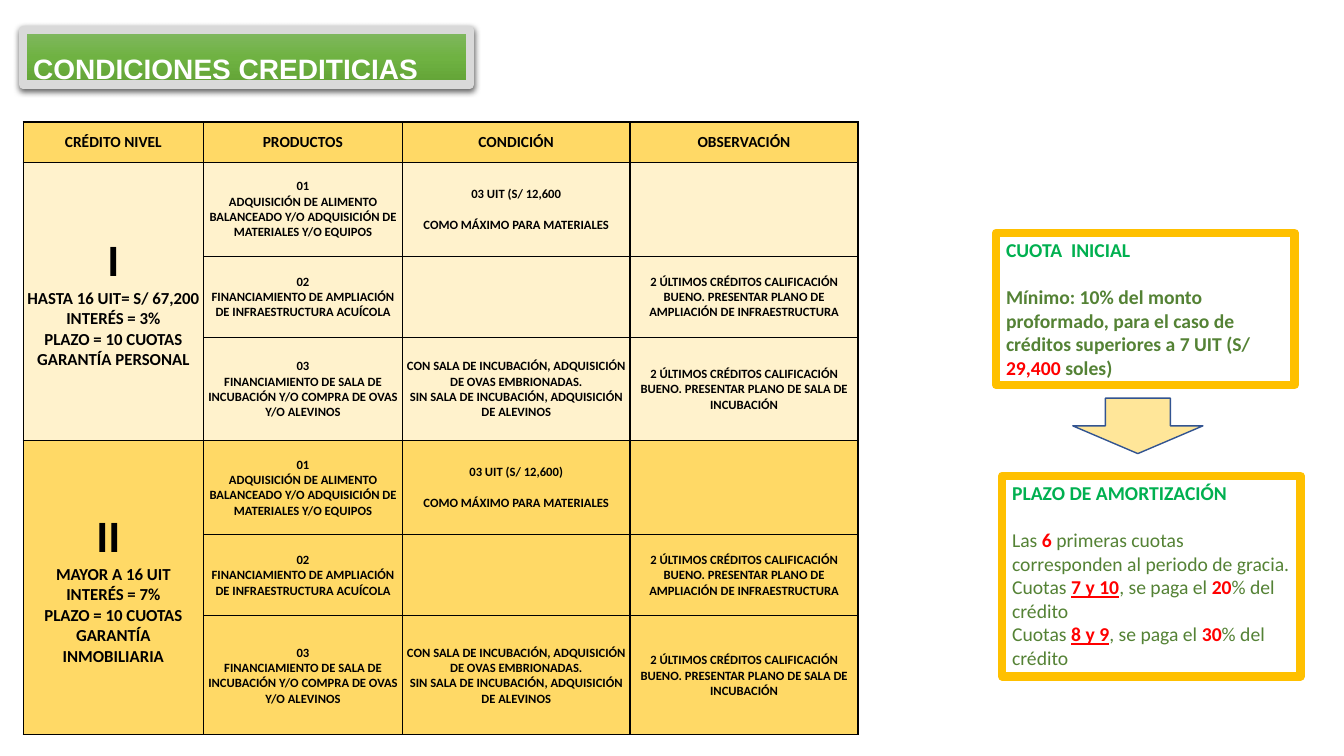
from copy import deepcopy
from lxml import etree
from pptx import Presentation
from pptx.dml.color import RGBColor
from pptx.enum.shapes import MSO_SHAPE
from pptx.enum.text import MSO_ANCHOR, PP_ALIGN
from pptx.oxml import parse_xml
from pptx.oxml.ns import nsdecls, qn
from pptx.util import Inches, Pt

RECT, ARROW = MSO_SHAPE.RECTANGLE, MSO_SHAPE.DOWN_ARROW
TOP, MIDDLE = MSO_ANCHOR.TOP, MSO_ANCHOR.MIDDLE
LEFT, CENTER, JUSTIFY = PP_ALIGN.LEFT, PP_ALIGN.CENTER, PP_ALIGN.JUSTIFY
GOLD, CREAM, BLACK = "FFD966", "FFF2CC", "000000"

HEAD = {"size": 14, "bold": True, "color": "00B050"}
PLAIN = {"size": 14, "bold": False, "color": "548235"}
STRONG = {**PLAIN, "bold": True}
RED = {**STRONG, "color": "FF0000"}
UNDER = {**RED, "underline": True}
LABEL = {"size": 11, "bold": True, "color": BLACK}
LEVEL, TERMS, SMALL = ({**LABEL, "size": size} for size in (32, 12, 9))

COLS = [1.79, 1.97, 2.26, 2.26]
ROWS = [0.4, 0.93, 0.81, 1.02, 0.93, 0.81, 1.18]
HEADS = ["CRÉDITO NIVEL", "PRODUCTOS", "CONDICIÓN", "OBSERVACIÓN"]
LEVELS = [
    ("I", "HASTA 16 UIT= S/ 67,200\nINTERÉS = 3%\nPLAZO = 10 CUOTAS\nGARANTÍA PERSONAL",
     "03 UIT (S/ 12,600", CREAM),
    ("II ", "MAYOR A 16 UIT\nINTERÉS = 7%\nPLAZO = 10 CUOTAS\nGARANTÍA INMOBILIARIA",
     "03 UIT (S/ 12,600)", GOLD),
]
GOODS = [
    "01\nADQUISICIÓN DE ALIMENTO BALANCEADO Y/O ADQUISICIÓN DE MATERIALES Y/O EQUIPOS",
    "02\nFINANCIAMIENTO DE AMPLIACIÓN DE INFRAESTRUCTURA ACUÍCOLA",
    "03\nFINANCIAMIENTO DE SALA DE INCUBACIÓN Y/O COMPRA DE OVAS Y/O ALEVINOS",
]
HATCH = ("CON SALA DE INCUBACIÓN, ADQUISICIÓN DE OVAS EMBRIONADAS.\n"
         "SIN SALA DE INCUBACIÓN, ADQUISICIÓN DE ALEVINOS")
RECORD = "2 ÚLTIMOS CRÉDITOS CALIFICACIÓN BUENO. PRESENTAR PLANO DE "
NOTES = ["", RECORD + "AMPLIACIÓN DE INFRAESTRUCTURA", RECORD + "SALA DE INCUBACIÓN"]

DEPOSIT = [
    [("CUOTA  INICIAL", HEAD)],
    [("Mínimo: 10% del monto proformado, para el caso de créditos superiores a 7 UIT (S/ ",
      STRONG), ("29,400", RED), (" soles)", STRONG)],
]
TERM = [
    [("PLAZO DE AMORTIZACIÓN", HEAD)],
    [("Las ", PLAIN), ("6 ", RED),
     ("primeras cuotas corresponden al periodo de gracia.", PLAIN)],
] + [
    [("Cuotas ", PLAIN), (dues, UNDER), (", se paga el ", PLAIN), (rate, RED),
     ("% del crédito", PLAIN)]
    for dues, rate in (("7 y 10", "20"), ("8 y 9", "30"))
]


def paint(text):
    """Turn a hex string into a colour."""
    return RGBColor.from_string(text)


def style(font, look):
    """Apply a dict of format values to a font."""
    values = {"name": "Calibri", **look, "size": Pt(look["size"])}
    font.color.rgb = paint(values.pop("color"))
    for name, value in values.items():
        setattr(font, name, value)


def write(frame, paras, align, gap=0):
    """Write paragraphs of runs, with a gap before the second one."""
    frame.word_wrap = True
    for index, runs in enumerate(paras):
        para = frame.add_paragraph() if index else frame.paragraphs[0]
        para.alignment = align
        if index == 1:
            para.space_before = Pt(gap)
        for text, look in runs:
            for turn, line in enumerate(text.split("\n")):
                if turn:
                    para.add_line_break()
                    para._p[-1].append(deepcopy(run._r.rPr))
                run = para.add_run()
                run.text = line
                style(run.font, look)


def block(slide, kind, box, fill, edge, width):
    """Add a preset shape with a flat fill and outline."""
    shape = slide.shapes.add_shape(kind, *map(Inches, box))
    shape.shadow.inherit = False
    if fill:
        shape.fill.solid()
        shape.fill.fore_color.rgb = paint(fill)
    else:
        shape.fill.background()
    shape.line.color.rgb = paint(edge)
    shape.line.width = Pt(width)
    shape.text_frame.vertical_anchor = TOP
    return shape


def title(slide, box):
    """Add the green title bar with its shading and shadow."""
    bar = block(slide, RECT, box, "6FB242", "D9D9D9", 6)
    props = bar._element.spPr
    stops = "".join(
        f'<a:gs pos="{pos}"><a:srgbClr val="{tint}"/></a:gs>'
        for pos, tint in ((0, "81B861"), (50000, "6FB242"), (100000, "62A336")))
    shade = parse_xml(f'<a:gradFill {nsdecls("a")} rotWithShape="1"><a:gsLst>{stops}</a:gsLst>'
                      '<a:lin ang="5400000" scaled="0"/></a:gradFill>')
    props.replace(props.find(qn("a:solidFill")), shade)
    props.find(qn("a:effectLst")).append(parse_xml(
        f'<a:outerShdw {nsdecls("a")} blurRad="{Pt(4.5)}" dist="{Pt(1.5)}" dir="5400000" '
        'rotWithShape="0"><a:srgbClr val="000000"><a:alpha val="63000"/></a:srgbClr>'
        '</a:outerShdw>'))
    look = {"size": 20, "bold": True, "color": "FFFFFF", "name": "Arial"}
    write(bar.text_frame, [[("CONDICIONES CREDITICIAS", look)]], JUSTIFY)
    bar.text_frame.paragraphs[0].line_spacing = 1.5


def border(cell, widths):
    """Draw the four black borders of a cell."""
    props = cell._tc.get_or_add_tcPr()
    for side, width in zip("LRTB", widths):
        line = etree.SubElement(props, qn(f"a:ln{side}"), w=str(Pt(width)))
        ink = etree.SubElement(line, qn("a:solidFill"))
        etree.SubElement(ink, qn("a:srgbClr"), val=BLACK)


def fill(cell, paras, tint, widths):
    """Set borders, fill and centred text of a cell."""
    border(cell, widths)
    cell.fill.solid()
    cell.fill.fore_color.rgb = paint(tint)
    cell.vertical_anchor = MIDDLE
    cell.margin_left = cell.margin_right = cell.margin_top = Inches(0.01)
    cell.margin_bottom = 0
    if paras:
        write(cell.text_frame, paras, CENTER, 11)


def credit(slide, left, top):
    """Add the table of credit levels."""
    box = map(Inches, (left, top, sum(COLS), sum(ROWS)))
    table = slide.shapes.add_table(len(ROWS), len(COLS), *box).table
    for col, width in zip(table.columns, COLS):
        col.width = Inches(width)
    for row, height in zip(table.rows, ROWS):
        row.height = Inches(height)
    for col, text in enumerate(HEADS):
        fill(table.cell(0, col), [[(text, LABEL)]], GOLD, (1, 1, 1, 1))
    count = len(GOODS)
    for rank, (name, terms, limit, tint) in enumerate(LEVELS):
        first = 1 + rank * count
        table.cell(first, 0).merge(table.cell(first + count - 1, 0))
        head = [[(name + "\n", LEVEL), (terms, TERMS)]]
        rules = [[limit, "COMO MÁXIMO PARA MATERIALES"], [], [HATCH]]
        for step in range(count):
            row = first + step
            fill(table.cell(row, 0), [] if step else head, tint, (1, 1, 1, 1))
            above = 1 if row == 1 else 0.5
            below = 1 if row == len(ROWS) - 1 else 0.5
            note = [NOTES[step]] if NOTES[step] else []
            for col, texts in enumerate(([GOODS[step]], rules[step], note), 1):
                paras = [[(text, SMALL)] for text in texts]
                fill(table.cell(row, col), paras, tint, (1, 1, above, below))


def panel(slide, box, paras):
    """Add a gold-framed note."""
    shape = block(slide, RECT, box, None, "FFC000", 6)
    write(shape.text_frame, paras, LEFT, 17)


def main():
    """Build and save the slide."""
    deck = Presentation()
    deck.slide_width, deck.slide_height = Inches(13.33), Inches(7.5)
    slide = deck.slides.add_slide(deck.slide_layouts[6])
    panel(slide, (9.88, 2.31, 2.96, 1.51), DEPOSIT)
    panel(slide, (9.94, 4.72, 2.96, 1.99), TERM)
    block(slide, ARROW, (10.64, 3.95, 1.29, 0.55), "FFE699", "325491", 1)
    credit(slide, 0.23, 1.21)
    title(slide, (0.23, 0.3, 4.43, 0.54))
    deck.save("out.pptx")


if __name__ == "__main__":
    main()
